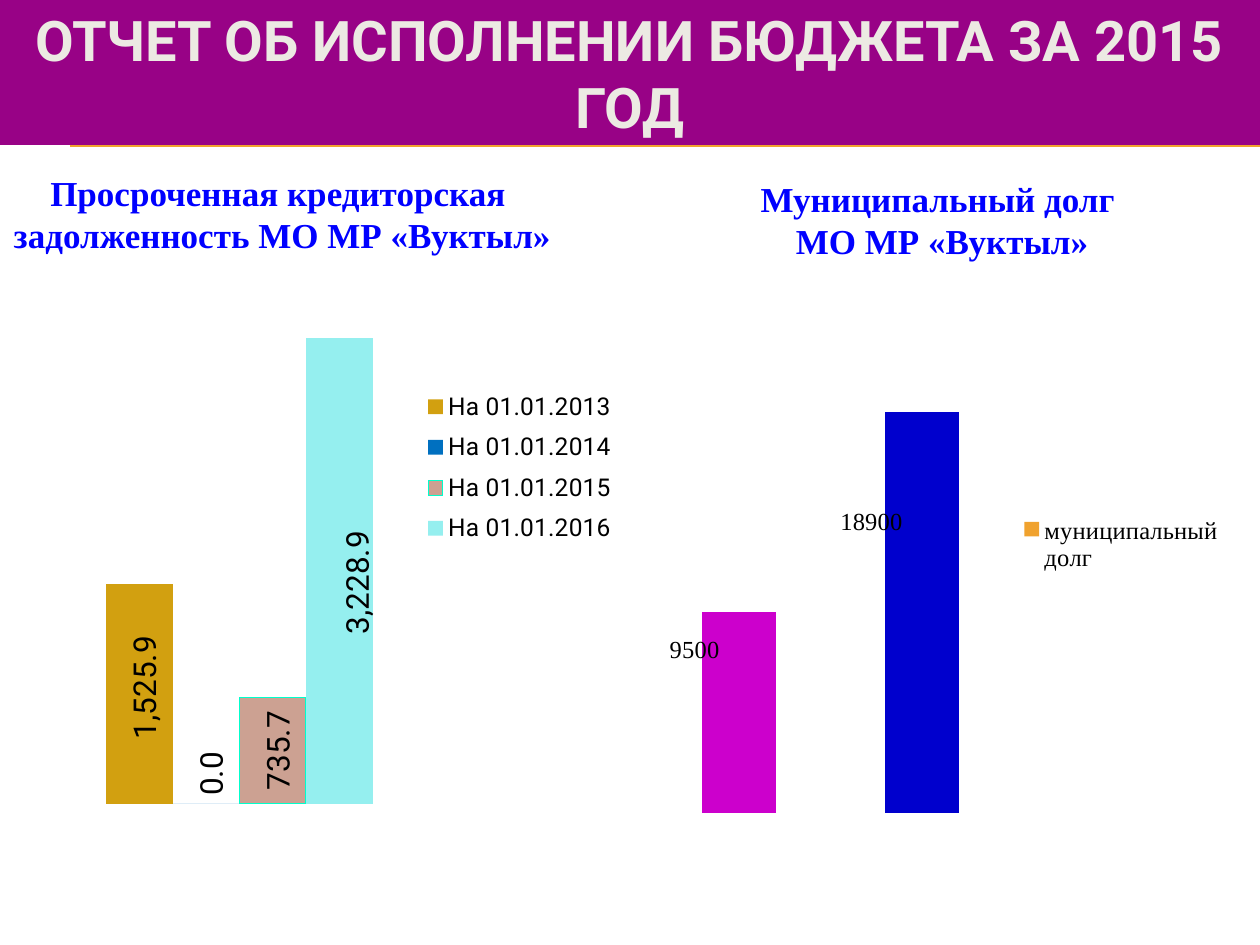
from lxml import etree
from pptx import Presentation
from pptx.chart.data import CategoryChartData
from pptx.dml.color import RGBColor
from pptx.enum.chart import XL_CHART_TYPE, XL_LABEL_POSITION, XL_LEGEND_POSITION, XL_TICK_LABEL_POSITION
from pptx.enum.shapes import MSO_CONNECTOR, MSO_SHAPE
from pptx.enum.text import MSO_ANCHOR, PP_ALIGN
from pptx.oxml.ns import qn
from pptx.util import Pt

COLUMN = XL_CHART_TYPE.COLUMN_CLUSTERED
MID = XL_LABEL_POSITION.CENTER
RIGHT = XL_LEGEND_POSITION.RIGHT
NONE = XL_TICK_LABEL_POSITION.NONE
STRAIGHT = MSO_CONNECTOR.STRAIGHT
RECT = MSO_SHAPE.RECTANGLE
MIDDLE = MSO_ANCHOR.MIDDLE
CENTER = PP_ALIGN.CENTER

PURPLE = RGBColor(0x98, 0x02, 0x86)
CREAM = RGBColor(0xEC, 0xEA, 0xE3)
ORANGE = RGBColor(0xF0, 0xA2, 0x2E)
BLUE = RGBColor(0x00, 0x00, 0xFF)
BLACK = RGBColor(0x00, 0x00, 0x00)
GOLD = RGBColor(0xD2, 0xA0, 0x10)
AZURE = RGBColor(0x00, 0x70, 0xC0)
ROSE = RGBColor(0xCC, 0xA1, 0x92)
MINT = RGBColor(0x00, 0xFF, 0xCC)
AQUA = RGBColor(0x95, 0xEF, 0xEF)
PINK = RGBColor(0xCC, 0x00, 0xCC)
NAVY = RGBColor(0x00, 0x00, 0xCD)
SANS = "Roboto"
SERIF = "Times New Roman"
PX = 914400 // 126


def place(host, spot, **parts):
    for old in host.findall(qn("c:layout")):
        host.remove(old)
    box = etree.Element(qn("c:layout"))
    host.insert(spot, box)
    man = etree.SubElement(box, qn("c:manualLayout"))
    for tag, val in parts.items():
        etree.SubElement(man, qn("c:" + tag)).set("val", str(val))


def add_bars(rect, names, rows, gap, top, plot, key, size, face, form, turn):
    data = CategoryChartData()
    data.categories = names
    for name, vals, color, marks in rows:
        data.add_series(name, vals)
    chart = slide.shapes.add_chart(COLUMN, *[n * PX for n in rect], data).chart
    chart.has_title = False
    chart.font.size = Pt(18)
    chart.font.name = SANS
    chart.font.color.rgb = BLACK
    chart.plots[0].gap_width = gap
    chart.plots[0].overlap = 0
    chart.plots[0].vary_by_categories = False
    chart.category_axis.visible = False
    axis = chart.value_axis
    axis.minimum_scale = 0
    axis.maximum_scale = top
    axis.has_major_gridlines = False
    axis.tick_label_position = NONE
    axis.format.line.fill.background()
    chart.has_legend = True
    chart.legend.position = RIGHT
    chart.legend.include_in_layout = False
    chart.legend.font.size = Pt(14)
    chart.legend.font.name = face
    root = chart.element
    area = root.find(".//" + qn("c:plotArea"))
    modes = {"xMode": "edge", "yMode": "edge"}
    place(area, 0, layoutTarget="inner", **modes, **dict(zip("xywh", plot)))
    place(root.find(".//" + qn("c:legend")), 1, **modes, **dict(zip("xywh", key)))
    for series, (name, vals, color, marks) in zip(chart.plots[0].series, rows):
        series.format.fill.solid()
        series.format.fill.fore_color.rgb = color
        for spot, shift in enumerate(marks):
            label = series.points[spot].data_label
            label.font.size = Pt(size)
            label.font.name = face
            label.font.color.rgb = BLACK
            label.position = MID
    shifts = [shift for row in rows for shift in row[3]]
    for node, (x, y) in zip(root.findall(".//" + qn("c:dLbl")), shifts):
        place(node, 1, x=x, y=y)
        style = etree.Element(qn("c:numFmt"), formatCode=form, sourceLinked="0")
        node.insert(2, style)
        body = node.find(".//" + qn("a:bodyPr"))
        body.set("rot", str(turn * 60000))
        body.set("vert", "horz")
    for lead in root.findall(".//" + qn("c:showLeaderLines")):
        lead.set("val", "0")
    return chart


prs = Presentation()
prs.slide_width = 1260 * PX
prs.slide_height = 945 * PX
slide = prs.slides.add_slide(prs.slide_layouts[6])

for y in (145, 146):
    line = slide.shapes.add_connector(STRAIGHT, 70 * PX, y * PX, 1260 * PX, y * PX)
    line.line.color.rgb = ORANGE
    line.line.width = Pt(0.75)
    etree.SubElement(line.element.spPr, qn("a:effectLst"))

head = slide.shapes.add_shape(RECT, 0, 0, 1260 * PX, 145 * PX)
head.shadow.inherit = False
head.fill.solid()
head.fill.fore_color.rgb = PURPLE
head.line.fill.background()
head.text_frame.word_wrap = True
head.text_frame.vertical_anchor = MIDDLE
para = head.text_frame.paragraphs[0]
para.text = "ОТЧЕТ ОБ ИСПОЛНЕНИИ БЮДЖЕТА ЗА 2015 ГОД"
para.alignment = CENTER
para.font.size = Pt(32)
para.font.bold = True
para.font.name = SANS
para.font.color.rgb = CREAM

arrears = [
    ("На 01.01.2013", [1525.9], GOLD, [(0.01, -0.01)]),
    ("На 01.01.2014", [0], AZURE, [(0.01, -0.05)]),
    ("На 01.01.2015", [735.7], ROSE, [(0.01, 0)]),
    ("На 01.01.2016", [3228.9], AQUA, [(0.03, 0.02)]),
]
chart = add_bars((0, 304, 630, 595), ["1"], arrears, 166, 3300,
                 (0.08, 0.04, 0.6, 0.8), (0.67, 0.13, 0.31, 0.29), 18, SANS, "#,##0.0", -90)
chart.value_axis.major_unit = 50
chart.value_axis.tick_labels.number_format = "#,##0.00"
chart.value_axis.tick_labels.number_format_is_linked = False
edge = chart.plots[0].series[2].format.line
edge.color.rgb = MINT
edge.width = Pt(0.75)

debt = [("муниципальный долг", [9500, 18900], ORANGE, [(-0.07, -0.11), (-0.08, -0.16)])]
chart = add_bars((622, 304, 632, 566), ["1", "2"], debt, 150, 20000,
                 (0.04, 0.15, 0.58, 0.75), (0.62, 0.36, 0.34, 0.13), 14, SERIF, "0", 0)
chart.value_axis.visible = False
for spot, color in enumerate([PINK, NAVY]):
    fill = chart.plots[0].series[0].points[spot].format.fill
    fill.solid()
    fill.fore_color.rgb = color

for x, y, wide, rows in [
    (0, 165, 556, ["Просроченная кредиторская", " задолженность МО МР «Вуктыл»"]),
    (699, 171, 486, ["Муниципальный долг ", "МО МР «Вуктыл»"]),
]:
    frame = slide.shapes.add_textbox(x * PX, y * PX, wide * PX, 110 * PX).text_frame
    frame.word_wrap = False
    frame.margin_left = frame.margin_right = 0
    frame.text = "\n".join(rows)
    for para in frame.paragraphs:
        para.alignment = CENTER
        para.font.size = Pt(20)
        para.font.bold = True
        para.font.name = SERIF
        para.font.color.rgb = BLUE

prs.save("out.pptx")
